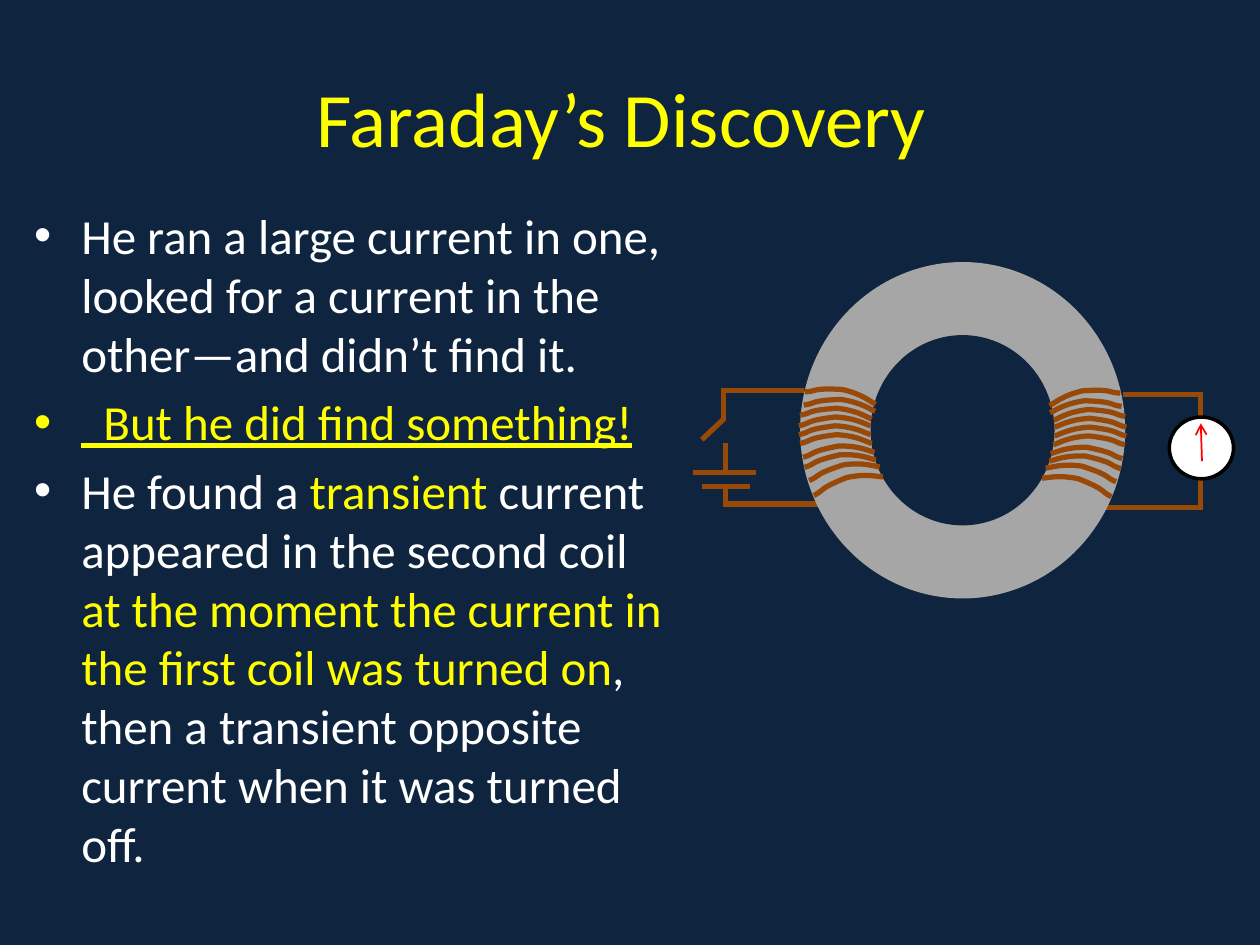
from lxml import etree
from pptx import Presentation
from pptx.dml.color import RGBColor
from pptx.enum.shapes import MSO_CONNECTOR, MSO_SHAPE
from pptx.enum.text import MSO_ANCHOR, MSO_AUTO_SIZE, PP_ALIGN
from pptx.oxml.ns import qn
from pptx.util import Inches, Pt

STRAIGHT = MSO_CONNECTOR.STRAIGHT
OVAL = MSO_SHAPE.OVAL
NO_FIT = MSO_AUTO_SIZE.NONE
MIDDLE, TOP = MSO_ANCHOR.MIDDLE, MSO_ANCHOR.TOP
CENTER = PP_ALIGN.CENTER

NAVY, YELLOW, WHITE = "0F243E", "FFFF00", "FFFFFF"
GRAY, COPPER, BLACK, RED = "A6A6A6", "984807", "000000", "FF0000"

POINTS = [
    [("He ran a large current in one, looked for a current in the "
      "other—and didn’t find it.", WHITE, False)],
    [("  But he did find something!", YELLOW, True)],
    [("He found a ", WHITE, False),
     ("transient ", YELLOW, False),
     ("current appeared in the second coil ", WHITE, False),
     ("at the moment the current in the first coil was turned on",
      YELLOW, False),
     (", then a transient opposite current when it was turned off.",
      WHITE, False)],
]

RETURNS = [(8.78, 4.03, 9.55, 4.03), (5.74, 4, 6.51, 4)]
SWITCH = [(5.72, 3.1, 6.38, 3.1), (5.74, 3.08, 5.74, 3.33),
          (5.75, 3.32, 5.57, 3.49)]
BATTERY = [(5.76, 3.52, 5.76, 3.77), (6, 3.75, 5.5, 3.75),
           (5.95, 3.86, 5.57, 3.86), (5.76, 3.86, 5.76, 4)]
LEADS = [(8.91, 3.13, 9.53, 3.13), (9.53, 3.11, 9.53, 3.36),
         (9.53, 3.78, 9.53, 4.03)]

# Left, top and tilt of each turn of the left coil; the right one mirrors it
TURNS = [(6.34, 3.38, 0), (6.34, 3.31, 0), (6.35, 3.24, 3), (6.38, 3.17, 5),
         (6.39, 3.09, 10), (6.37, 3.54, -4), (6.35, 3.45, 0),
         (6.38, 3.61, -6), (6.41, 3.69, -11), (6.44, 3.79, -15)]
WIDTH = 0.57
AXIS = 7.64
START = (0, 0.07)
CURVES = [[(0.1, 0.05), (0.04, 0.03), (0.29, 0)],
          [(0.46, 0.01), (0.53, 0.06), (WIDTH, 0.07)]]


def color(code):
    return RGBColor.from_string(code)


def place(shape, *box):
    for name, size in zip(("left", "top", "width", "height"), box):
        setattr(shape, name, Inches(size))


def add_run(para, text, code, **style):
    run = para.add_run()
    run.text = text
    for name, value in {"name": "Calibri", **style}.items():
        setattr(run.font, name, value)
    run.font.color.rgb = color(code)


def set_frame(shape, anchor):
    frame = shape.text_frame
    for name, value in {"word_wrap": True, "auto_size": NO_FIT,
                        "vertical_anchor": anchor}.items():
        setattr(frame, name, value)
    return frame


def add_title(slide):
    title = slide.shapes.title
    place(title, 0.5, 0.3, 9, 1.25)
    para = set_frame(title, MIDDLE).paragraphs[0]
    para.alignment = CENTER
    add_run(para, "Faraday’s Discovery ", YELLOW, size=Pt(44))


def add_points(slide):
    body = slide.placeholders[1]
    place(body, 0.17, 1.58, 5.25, 5.67)
    frame = set_frame(body, TOP)
    for i, runs in enumerate(POINTS):
        para = frame.add_paragraph() if i else frame.paragraphs[0]
        for text, code, under in runs:
            add_run(para, text, code, size=Pt(28), underline=under)


def add_line(group, ends, code=COPPER, width=3, arrow=False):
    line = group.add_connector(STRAIGHT, *map(Inches, ends))
    line.line.color.rgb = color(code)
    line.line.width = Pt(width)
    if arrow:
        etree.SubElement(line.line._get_or_add_ln(), qn("a:tailEnd"),
                         type="arrow")
    etree.SubElement(line._element.spPr, qn("a:effectLst"))


def add_lines(group, lines):
    for ends in lines:
        add_line(group, ends)


def add_disc(group, box, fill, edge=None):
    disc = group.add_shape(OVAL, *map(Inches, box))
    disc.shadow.inherit = False
    disc.fill.solid()
    disc.fill.fore_color.rgb = color(fill)
    if edge:
        disc.line.color.rgb = color(edge)
        disc.line.width = Pt(2)
    else:
        disc.line.fill.background()


def add_turn(group, left, top, tilt, mirror):
    """Draw one turn of wire, flipped left to right for the right coil."""
    def spot(dot):
        x, y = dot
        return Inches(WIDTH - x if mirror else x), Inches(y)

    pen = group.build_freeform(*spot(START))
    pen.add_line_segments([spot(curve[-1]) for curve in CURVES], close=False)
    turn = pen.convert_to_shape(Inches(left), Inches(top))
    # Bend each straight segment into a cubic curve
    for part, curve in zip(list(turn._element.iter(qn("a:lnTo"))), CURVES):
        bend = etree.Element(qn("a:cubicBezTo"))
        for x, y in map(spot, curve):
            etree.SubElement(bend, qn("a:pt"), x=str(x), y=str(y))
        part.getparent().replace(part, bend)
    turn.shadow.inherit = False
    turn.fill.background()
    turn.line.color.rgb = color(COPPER)
    turn.line.width = Pt(3)
    turn.rotation = tilt


def add_coils(group):
    for left, top, tilt in TURNS:
        add_turn(group, left, top, tilt, False)
    for left, top, tilt in TURNS:
        add_turn(group, 2 * AXIS - left - WIDTH, top + 0.01, -tilt, True)


def main():
    deck = Presentation()
    deck.slide_width, deck.slide_height = Inches(10), Inches(7.5)
    slide = deck.slides.add_slide(deck.slide_layouts[1])
    slide.background.fill.solid()
    slide.background.fill.fore_color.rgb = color(NAVY)

    add_title(slide)
    add_points(slide)
    group = slide.shapes.add_group_shape().shapes
    add_lines(group, RETURNS)
    add_disc(group, (6.35, 2.08, 2.58, 2.67), GRAY)
    add_disc(group, (6.91, 2.66, 1.46, 1.51), NAVY)
    add_coils(group)
    add_lines(group, SWITCH + LEADS + BATTERY)
    add_disc(group, (9.28, 3.31, 0.51, 0.49), WHITE, BLACK)
    add_line(group, (9.54, 3.66, 9.53, 3.36), RED, 1, arrow=True)
    deck.save("out.pptx")


if __name__ == "__main__":
    main()
